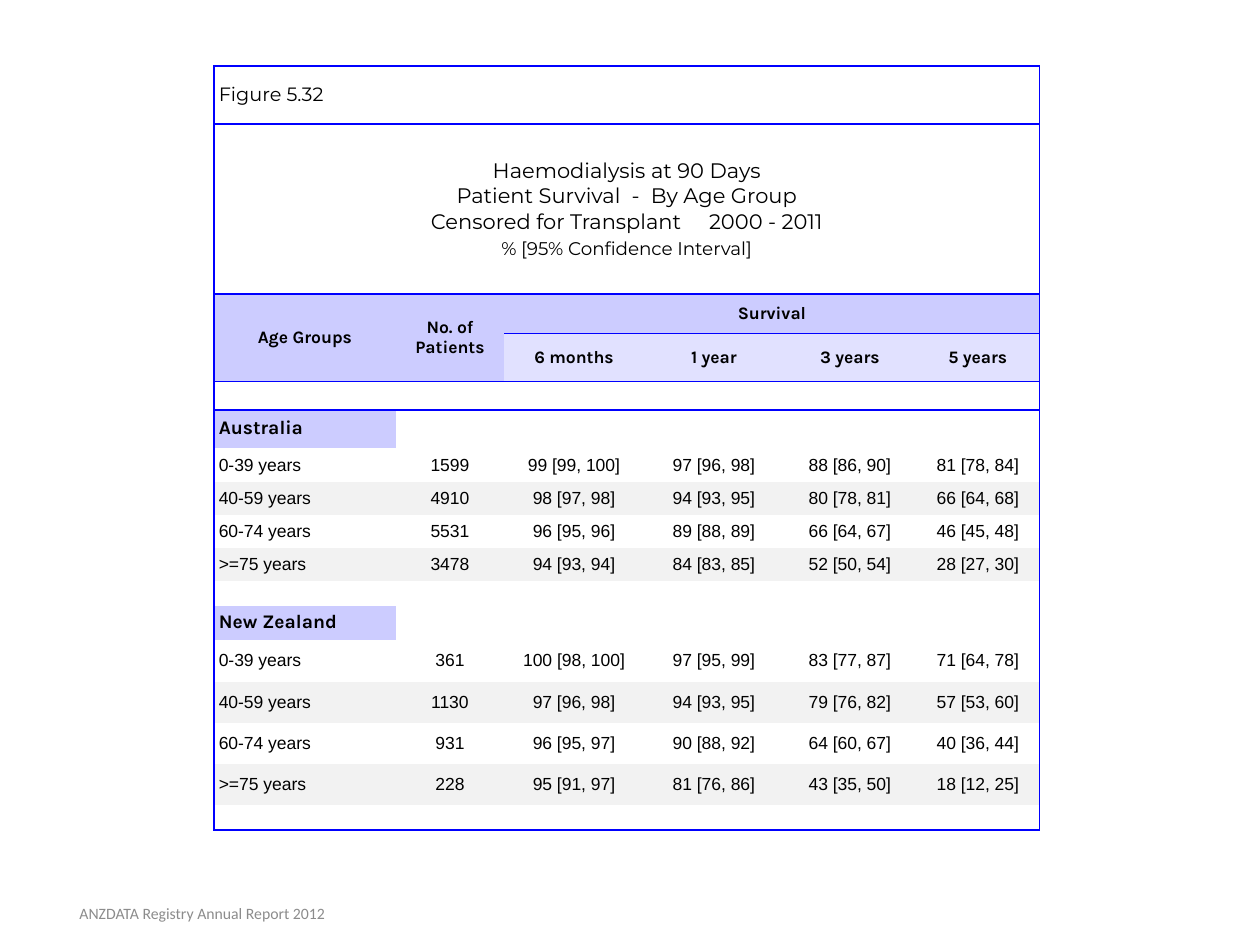
from lxml.etree import SubElement
from pptx import Presentation
from pptx.dml.color import RGBColor
from pptx.enum.text import MSO_ANCHOR, PP_ALIGN
from pptx.oxml.ns import qn
from pptx.util import Cm, Pt

COLORS = {"text": "000000", "rule": "0000FF", "header": "CCCCFF",
          "subheader": "E1E1FF", "stripe": "F2F2F2", "footer": "8C8C8C"}
NO_STYLE = "{2D5ABB26-0587-4C30-8999-92F81FD0307C}"

# Content
FIGURE = "Figure 5.32"
# Each title line: size, then pieces joined by a space widened by the given points
TITLE = [
    (12, ["Haemodialysis at 90 Days"], 0),
    (12, ["Patient Survival", "-", "By Age Group"], 3.15),
    (12, ["Censored for Transplant", "2000 - 2011"], 12.6),
    (10.5, ["% [95% Confidence Interval]"], 0),
]
PERIODS = ["6 months", "1 year", "3 years", "5 years"]
COUNTRIES = {
    "Australia": [
        ("0-39 years", "1599", "99 [99, 100]", "97 [96, 98]", "88 [86, 90]", "81 [78, 84]"),
        ("40-59 years", "4910", "98 [97, 98]", "94 [93, 95]", "80 [78, 81]", "66 [64, 68]"),
        ("60-74 years", "5531", "96 [95, 96]", "89 [88, 89]", "66 [64, 67]", "46 [45, 48]"),
        (">=75 years", "3478", "94 [93, 94]", "84 [83, 85]", "52 [50, 54]", "28 [27, 30]"),
    ],
    "New Zealand": [
        ("0-39 years", "361", "100 [98, 100]", "97 [95, 99]", "83 [77, 87]", "71 [64, 78]"),
        ("40-59 years", "1130", "97 [96, 98]", "94 [93, 95]", "79 [76, 82]", "57 [53, 60]"),
        ("60-74 years", "931", "96 [95, 97]", "90 [88, 92]", "64 [60, 67]", "40 [36, 44]"),
        (">=75 years", "228", "95 [91, 97]", "81 [76, 86]", "43 [35, 50]", "18 [12, 25]"),
    ],
}
FOOTER = "ANZDATA Registry Annual Report 2012"

# Layout in centimetres
COLUMN_WIDTHS = [3.67, 2.18, 2.82, 2.82, 2.66, 2.5]
ROW_HEIGHTS = ([1.17, 3.43, 0.79, 0.97, 0.58, 0.77] + [0.67] * 4
               + [0.5, 0.69] + [0.83] * 4 + [0.5])
LAST_ROW, LAST_COLUMN = len(ROW_HEIGHTS), len(COLUMN_WIDTHS)
COUNTRY_ROWS = [5, 11]
MERGES = [((0, 0), (0, 5)), ((1, 0), (1, 5)), ((2, 0), (3, 0)),
          ((2, 1), (3, 1)), ((2, 2), (2, 5))]


def add_run(paragraph, text, size, font, color="text", bold=False):
    run = paragraph.add_run()
    run.text = text
    run.font.size = Pt(size)
    run.font.name = font
    run.font.bold = bold
    run.font.color.rgb = RGBColor.from_string(COLORS[color])
    return run


def write(cell, text, size=10, font="Arial", bold=False, centered=True):
    paragraph = cell.text_frame.paragraphs[0]
    paragraph.alignment = PP_ALIGN.CENTER if centered else PP_ALIGN.LEFT
    add_run(paragraph, text, size, font, bold=bold)
    return paragraph


def paint(cell, color):
    cell.fill.solid()
    cell.fill.fore_color.rgb = RGBColor.from_string(COLORS[color])


def has_rule(boundary, column):
    return boundary in (0, 1, 2, 4, LAST_ROW) or (boundary == 3 and column >= 2)


def add_borders(cell, row, column):
    height = cell.span_height if cell.is_merge_origin else 1
    width = cell.span_width if cell.is_merge_origin else 1
    sides = {"a:lnL": column == 0,
             "a:lnR": column + width == LAST_COLUMN,
             "a:lnT": has_rule(row, column),
             "a:lnB": has_rule(row + height, column)}
    properties = cell._tc.get_or_add_tcPr()
    for tag, shown in sides.items():
        if shown:
            line = SubElement(properties, qn(tag), w=str(Pt(1)))
            fill = SubElement(line, qn("a:solidFill"))
            SubElement(fill, qn("a:srgbClr"), val=COLORS["rule"])


def prepare_cell(cell, row, column):
    cell.margin_left = cell.margin_right = Cm(0.1)
    cell.margin_top = cell.margin_bottom = Cm(0.1 if row < 2 else 0.05)
    cell.vertical_anchor = MSO_ANCHOR.MIDDLE
    add_borders(cell, row, column)
    cell.fill.background()
    # Small type keeps empty cells from stretching their row
    SubElement(cell.text_frame.paragraphs[0]._p, qn("a:endParaRPr"), sz="800")


def add_survival_table(slide):
    frame = slide.shapes.add_table(LAST_ROW, LAST_COLUMN, Cm(4.31), Cm(1.33),
                                   Cm(sum(COLUMN_WIDTHS)), Cm(sum(ROW_HEIGHTS)))
    table = frame.table
    table.first_row = table.horz_banding = False
    table._tbl.tblPr.find(qn("a:tableStyleId")).text = NO_STYLE
    for column, width in zip(table.columns, COLUMN_WIDTHS):
        column.width = Cm(width)
    for row, height in zip(table.rows, ROW_HEIGHTS):
        row.height = Cm(height)
    for start, end in MERGES:
        table.cell(*start).merge(table.cell(*end))
    for row in range(LAST_ROW):
        for column in range(LAST_COLUMN):
            prepare_cell(table.cell(row, column), row, column)
    return table


def fill_title(table):
    write(table.cell(0, 0), FIGURE, 11, "Montserrat", centered=False)
    text_frame = table.cell(1, 0).text_frame
    for index, (size, pieces, gap) in enumerate(TITLE):
        paragraph = text_frame.add_paragraph() if index else text_frame.paragraphs[0]
        paragraph.alignment = PP_ALIGN.CENTER
        if index == len(TITLE) - 1:
            paragraph.space_before = Pt(2)
        for position, piece in enumerate(pieces):
            if position:
                space = add_run(paragraph, " ", size, "Montserrat")
                space.font._element.set("spc", str(round(gap * 100)))
            add_run(paragraph, piece, size, "Montserrat")


def fill_header(table):
    for column, text in enumerate(["Age Groups", "No. of Patients", "Survival"]):
        write(table.cell(2, column), text, font="Karla", bold=True)
        paint(table.cell(2, column), "header")
    for column, text in enumerate(PERIODS, start=2):
        write(table.cell(3, column), text, font="Karla", bold=True)
        paint(table.cell(3, column), "subheader")


def fill_countries(table):
    for first_row, (country, records) in zip(COUNTRY_ROWS, COUNTRIES.items()):
        heading = table.cell(first_row, 0)
        write(heading, country, 11, "Karla", True, False).line_spacing = 0.75
        paint(heading, "header")
        for index, record in enumerate(records):
            for column, text in enumerate(record):
                cell = table.cell(first_row + 1 + index, column)
                write(cell, text, centered=column > 0)
                if index % 2:
                    paint(cell, "stripe")


def add_footer(slide):
    box = slide.shapes.add_textbox(Cm(0.05), Cm(17.91), Cm(8.05), Cm(1.02))
    box.text_frame.word_wrap = True
    box.text_frame.vertical_anchor = MSO_ANCHOR.MIDDLE
    paragraph = box.text_frame.paragraphs[0]
    paragraph.alignment = PP_ALIGN.CENTER
    add_run(paragraph, FOOTER, 9, "Calibri", "footer")


def main():
    presentation = Presentation()
    presentation.slide_width, presentation.slide_height = Cm(25.4), Cm(19.05)
    slide = presentation.slides.add_slide(presentation.slide_layouts[6])
    table = add_survival_table(slide)
    fill_title(table)
    fill_header(table)
    fill_countries(table)
    add_footer(slide)
    presentation.save("out.pptx")


if __name__ == "__main__":
    main()
